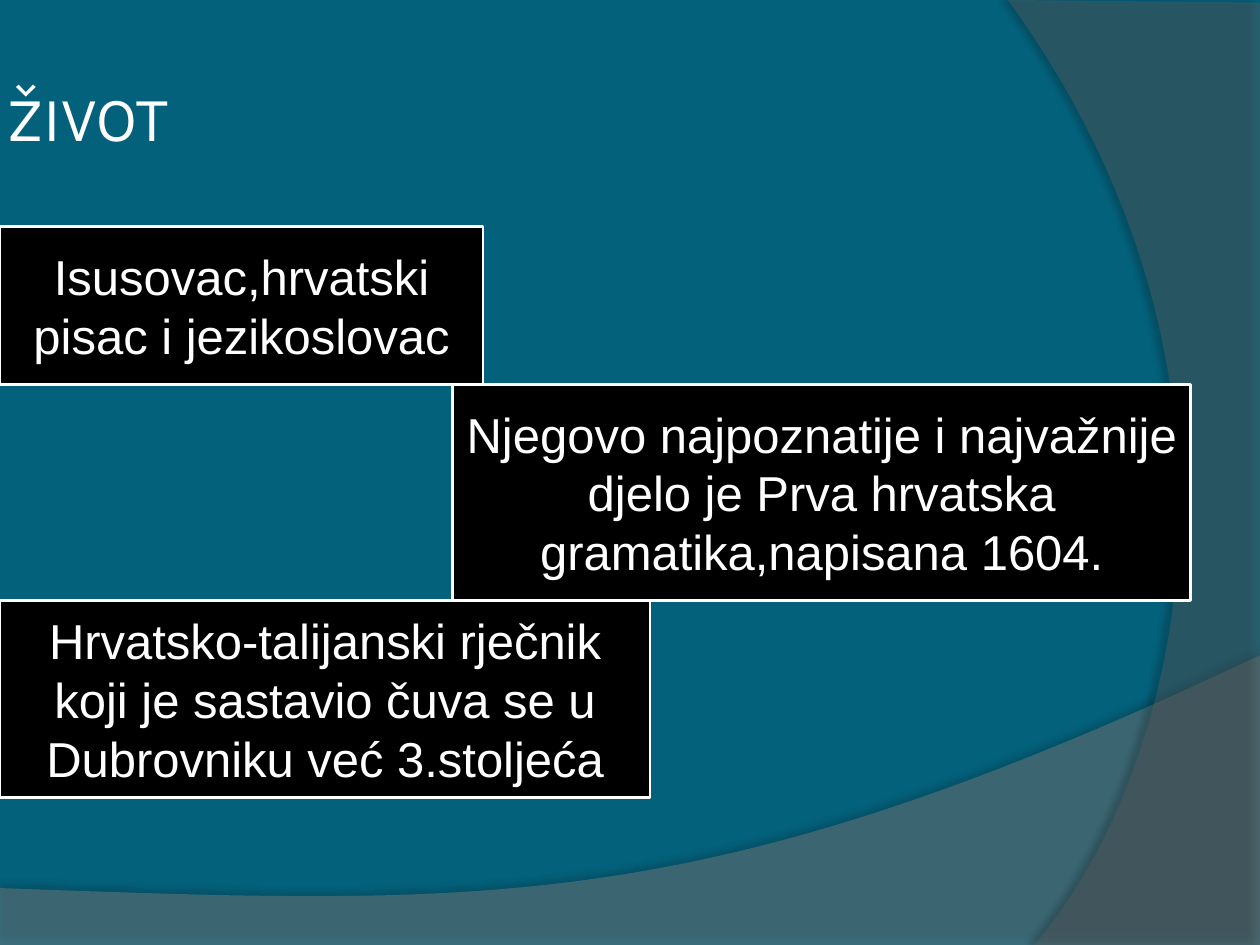
from dataclasses import dataclass

from lxml.etree import SubElement
from pptx import Presentation
from pptx.dml.color import RGBColor
from pptx.enum.shapes import MSO_SHAPE
from pptx.enum.text import MSO_ANCHOR, PP_ALIGN
from pptx.oxml.ns import qn
from pptx.util import Pt


@dataclass(frozen=True)
class Theme:
    background: str = "04617B"
    wave: str = "7F7F7F"
    arc: str = "5E5E5E"
    shadow: str = "000000"
    card: str = "000000"
    text: str = "FFFFFF"
    title_font: str = "Karla"
    body_font: str = "Arial"
    title_size: int = 36
    body_size: int = 28
    line_width: float = 1.5


THEME = Theme()
CARDS = [
    ("Isusovac,hrvatski pisac i jezikoslovac", 0, 276, 90),
    ("Njegovo najpoznatije i najvažnije djelo je Prva hrvatska "
     "gramatika,napisana 1604.", 258.5, 422, 123.5),
    ("Hrvatsko-talijanski rječnik koji je sastavio čuva se u "
     "Dubrovniku već 3.stoljeća", 0, 371.5, 112.5),
]


def rgb(color):
    return RGBColor.from_string(color)


def style_text(p, font, size):
    for r in p.runs:
        r.font.name = font
        r.font.size = Pt(size)
        r.font.color.rgb = rgb(THEME.text)


def bezier(p0, p1, p2, p3, steps=60):
    for i in range(1, steps + 1):
        t = i / steps
        u = 1 - t
        yield tuple(
            u**3 * a + 3 * u * u * t * b + 3 * u * t * t * c + t**3 * d
            for a, b, c, d in zip(p0, p1, p2, p3)
        )


def add_alpha(color, percent):
    SubElement(color, qn("a:alpha"), val=str(percent * 1000))


def add_swoosh(s, left, top, edges, curve, color, opacity, shadow):
    points = [(Pt(x), Pt(y)) for x, y in [*edges, *bezier(*curve)]]
    builder = s.shapes.build_freeform(*points[0])
    builder.add_line_segments(points[1:], close=True)
    sp = builder.convert_to_shape(Pt(left), Pt(top))
    sp.fill.solid()
    sp.fill.fore_color.rgb = rgb(color)
    add_alpha(sp.element.spPr.find(qn("a:solidFill"))[0], opacity)
    sp.line.fill.background()

    shade, blur, distance, angle = shadow
    effects = SubElement(sp.element.spPr, qn("a:effectLst"))
    outer = SubElement(
        effects, qn("a:outerShdw"), blurRad=str(Pt(blur)),
        dist=str(Pt(distance)), dir=str(angle * 60000),
        algn="ctr", rotWithShape="0",
    )
    add_alpha(SubElement(outer, qn("a:srgbClr"), val=THEME.shadow), shade)


def add_backdrop(s, left, top, width, height):
    s.background.fill.solid()
    s.background.fill.fore_color.rgb = rgb(THEME.background)
    wave_edges = [(0, 507.5), (0, height), (width, height), (width, 374.5)]
    wave_curve = [(width, 374.5), (402.5, 525), (281.5, 517.5), (0, 507.5)]
    add_swoosh(s, left, top, wave_edges, wave_curve,
               THEME.wave, 45, (35, 4, 3.5, 270))
    arc_edges = [(width, 1.5), (width, height), (591, height)]
    arc_curve = [(591, height), (673, 445.5), (733, 216), (576, 0)]
    add_swoosh(s, left, top, arc_edges, arc_curve,
               THEME.arc, 40, (45, 4, 4, 180))


def add_title(s, left, top, width, height):
    title = s.shapes.title
    s.shapes.element.append(title.element)
    title.left, title.top = Pt(left), Pt(top)
    title.width, title.height = Pt(width), Pt(height)
    tf = title.text_frame
    tf.text = "ŽIVOT"
    tf.vertical_anchor = MSO_ANCHOR.MIDDLE
    tf.margin_left = tf.margin_right = Pt(3.6)
    tf.margin_top = tf.margin_bottom = Pt(3.6)
    p = tf.paragraphs[0]
    p.alignment = PP_ALIGN.LEFT
    style_text(p, THEME.title_font, THEME.title_size)


def add_card(s, text, left, top, width, height):
    sp = s.shapes.add_shape(
        MSO_SHAPE.RECTANGLE, Pt(left), Pt(top), Pt(width), Pt(height)
    )
    sp.shadow.inherit = False
    sp.fill.solid()
    sp.fill.fore_color.rgb = rgb(THEME.card)
    sp.line.color.rgb = rgb(THEME.text)
    sp.line.width = Pt(THEME.line_width)
    tf = sp.text_frame
    tf.text = text
    tf.word_wrap = True
    tf.vertical_anchor = MSO_ANCHOR.MIDDLE
    p = tf.paragraphs[0]
    p.alignment = PP_ALIGN.CENTER
    style_text(p, THEME.body_font, THEME.body_size)


def add_card_stairs(s, left, top):
    for text, indent, width, height in CARDS:
        add_card(s, text, left + indent, top, width, height)
        top += height


def main():
    prs = Presentation()
    prs.slide_width, prs.slide_height = Pt(720), Pt(540)
    s = prs.slides.add_slide(prs.slide_layouts[5])
    add_backdrop(s, 0, 0, 720, 540)
    add_title(s, 0, 21.6, 648, 90)
    add_card_stairs(s, 0, 129.6)
    prs.save("out.pptx")


if __name__ == "__main__":
    main()
